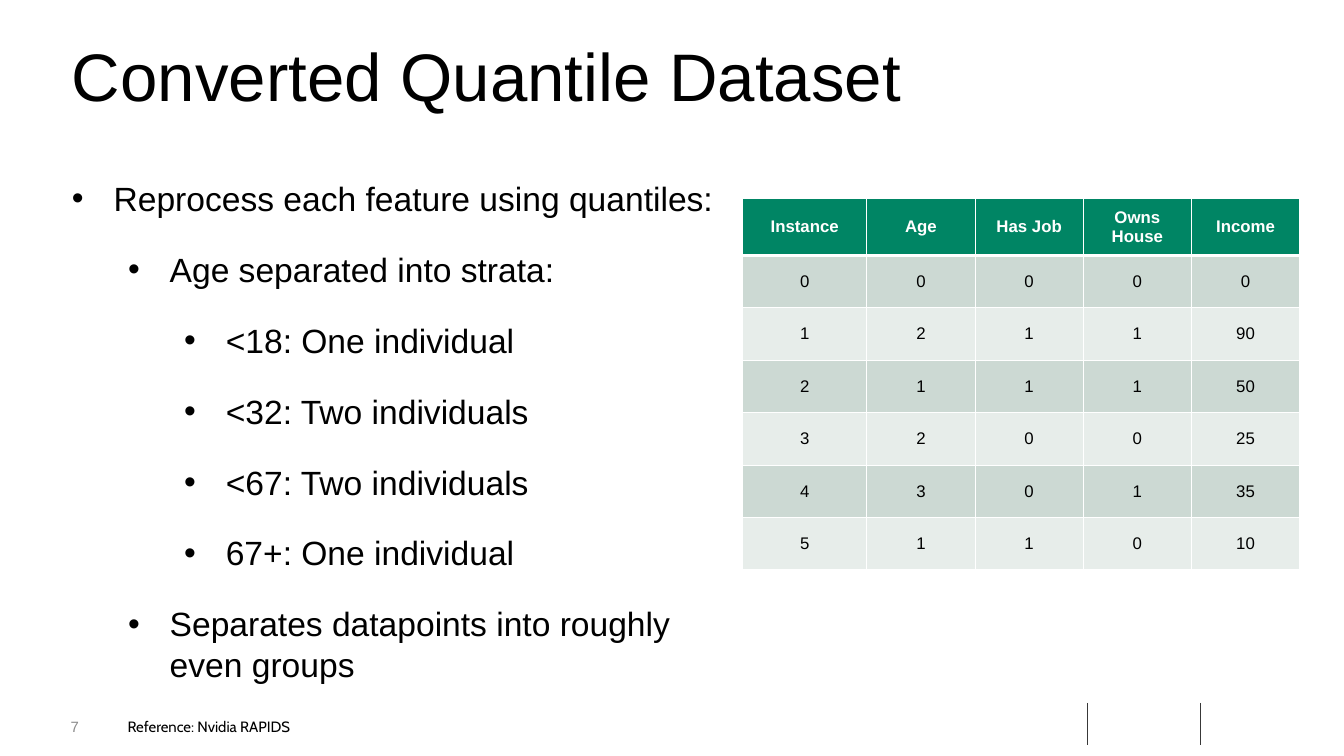
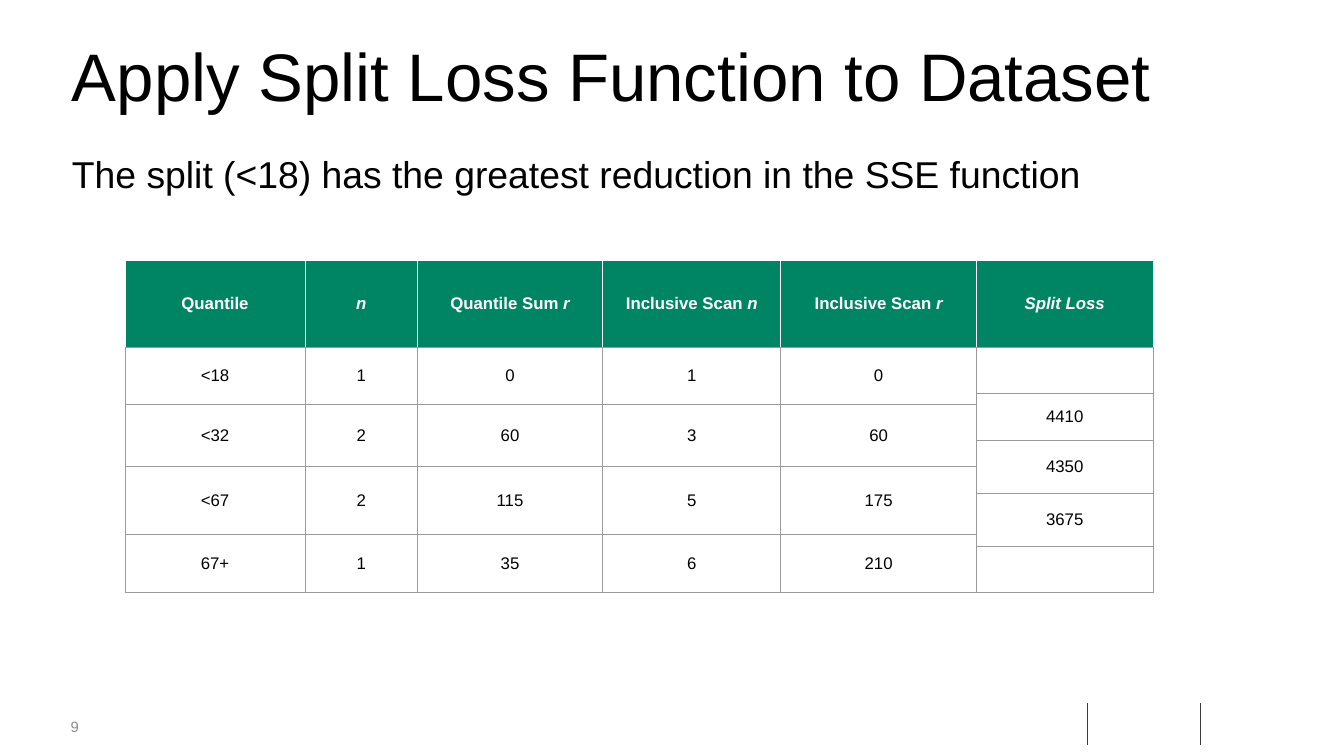
from pptx import Presentation
from pptx.dml.color import RGBColor
from pptx.enum.shapes import MSO_CONNECTOR as Link
from pptx.enum.text import MSO_ANCHOR as Anchor, MSO_AUTO_SIZE as Fit, PP_ALIGN as Align
from pptx.oxml.ns import qn
from pptx.util import Inches, Pt
from lxml.etree import SubElement

BLACK, WHITE, GREEN = "000000", "FFFFFF", "008564"
DARK, GREY, RULE = "383838", "8C8C8C", "9A9A9A"
BANDS = ["CCD9D3", "E7EDEA"]


def put(para, text, size=18, font="Arial", color=BLACK, bold=False,
        align=Align.LEFT, lead=1.0, before=0, level=None):
    props = para._p.get_or_add_pPr()
    if level is None:
        props.set("marL", "0")
        props.set("indent", "0")
        SubElement(props, qn("a:buNone"))
    else:
        para.level = level
        props.set("marL", str(Inches(0.62 + level * 0.835)))
        props.set("indent", str(Inches(-0.62)))
        SubElement(props, qn("a:buChar"), char="•")
    para.alignment, para.line_spacing, para.space_before = align, lead, Pt(before)
    for i, part in enumerate(text.split("*")):
        if part:
            run = para.add_run()
            run.text = part
            run.font.size, run.font.name = Pt(size), font
            run.font.bold, run.font.italic = bold, i % 2 == 1
            run.font.color.rgb = RGBColor.from_string(color)


def style(cell, text, fill, edges, **fmt):
    cell.vertical_anchor = Anchor.MIDDLE
    props = cell._tc.get_or_add_tcPr()
    for side, (color, width) in zip("LRTB", edges):
        line = SubElement(props, qn(f"a:ln{side}"), w=str(Pt(width)))
        paint = SubElement(line, qn("a:solidFill"))
        SubElement(paint, qn("a:srgbClr"), val=color)
    if fill:
        cell.fill.solid()
        cell.fill.fore_color.rgb = RGBColor.from_string(fill)
    else:
        cell.fill.background()
    put(cell.text_frame.paragraphs[0], text, align=Align.CENTER, **fmt)


deck = Presentation()
deck.slide_width, deck.slide_height = Inches(20), Inches(11.25)

pages = [
    ("7", "Converted Quantile Dataset", (0.97, 2.6, 9.91, 7.7),
     (11.05, 2.95, 8.29, 5.76), [1.85] + [1.61] * 4, [0.85] + [0.78] * 6),
    ("9", "Apply Split Loss Function to Dataset", (0.97, 2.2, 18.06, 0.77),
     (1.86, 3.88, 15.29, 4.96), [2.68, 1.67, 2.76, 2.65, 2.91, 2.63],
     [1.29, 0.69, 0.16, 0.53, 0.39, 0.41, 0.6, 0.18, 0.69]),
]
slides, bodies, grids = [], [], []
for num, head, area, spot, cols, rows in pages:
    slide = deck.slides.add_slide(deck.slide_layouts[1])
    for x in (16.18, 17.86):
        rule = slide.shapes.add_connector(
            Link.STRAIGHT, Inches(x), Inches(10.46), Inches(x), Inches(11.09))
        rule.line.color.rgb = RGBColor.from_string(DARK)
        rule.line.width = Pt(1)
        SubElement(rule._element.spPr, qn("a:effectLst"))

    box = slide.shapes.add_textbox(Inches(1.05), Inches(10.68), Inches(0.59), Inches(0.27))
    frame = box.text_frame
    frame.margin_left = frame.margin_right = frame.margin_top = frame.margin_bottom = 0
    frame.vertical_anchor, frame.word_wrap = Anchor.MIDDLE, True
    put(frame.paragraphs[0], num, size=16, color=GREY)

    title, body = slide.shapes.title, slide.placeholders[1]
    for shape, place in ((title, (0.97, 0.6, 17.49, 1.83)), (body, area)):
        shape.left, shape.top, shape.width, shape.height = map(Inches, place)
        shape.text_frame.vertical_anchor = Anchor.TOP
        shape.text_frame.auto_size = Fit.NONE
    put(title.text_frame.paragraphs[0], head, size=72, lead=0.9)

    grid = slide.shapes.add_table(len(rows), len(cols), *map(Inches, spot)).table
    grid.horz_banding = False
    for col, width in zip(grid.columns, cols):
        col.width = Inches(width)
    for row, height in zip(grid.rows, rows):
        row.height = Inches(height)
    slides.append(slide)
    bodies.append(body.text_frame)
    grids.append(grid)

points = [
    (0, "Reprocess each feature using quantiles:"),
    (1, "Age separated into strata:"),
    (2, "<18: One individual"),
    (2, "<32: Two individuals"),
    (2, "<67: Two individuals"),
    (2, "67+: One individual"),
    (1, "Separates datapoints into roughly even groups"),
]
for i, (level, text) in enumerate(points):
    para = bodies[0].add_paragraph() if i else bodies[0].paragraphs[0]
    put(para, text, size=36, level=level, before=32.7 if i else 0)

data = [
    ["Instance", "Age", "Has Job", "Owns House", "Income"],
    [0, 0, 0, 0, 0],
    [1, 2, 1, 1, 90],
    [2, 1, 1, 1, 50],
    [3, 2, 0, 0, 25],
    [4, 3, 0, 1, 35],
    [5, 1, 1, 0, 10],
]
thin, thick = (WHITE, 1), (WHITE, 3)
for r, row in enumerate(data):
    edges = [thin, thin, thick if r == 1 else thin, thick if r == 0 else thin]
    for c, value in enumerate(row):
        style(grids[0].cell(r, c), str(value), BANDS[(r - 1) % 2] if r else GREEN,
              edges, color=BLACK if r else WHITE, bold=r == 0)

note = slides[0].shapes.add_textbox(Inches(1.8), Inches(10.66), Inches(12.16), Inches(0.34))
note.text_frame.word_wrap = True
note.text_frame.vertical_anchor = Anchor.MIDDLE
put(note.text_frame.paragraphs[0], "Reference: Nvidia RAPIDS", size=16, font="Cabin", lead=0.9)

put(bodies[1].paragraphs[0],
    "The split (<18) has the greatest reduction in the SSE function", size=40)

heads = ["Quantile", "*n*", "Quantile Sum *r*", "Inclusive Scan *n*",
         "Inclusive Scan *r*", "*Split Loss*"]
scans = [
    ["<18", 1, 0, 1, 0],
    ["<32", 2, 60, 3, 60],
    ["<67", 2, 115, 5, 175],
    ["67+", 1, 35, 6, 210],
]
losses = [4410, 4350, 3675]
words = {(0, c): text for c, text in enumerate(heads)}
loss = grids[1]
for i, row in enumerate(scans):
    for c, value in enumerate(row):
        words[2 * i + 1, c] = str(value)
        loss.cell(2 * i + 1, c).merge(loss.cell(2 * i + 2, c))
for i, value in enumerate(losses):
    words[2 * i + 2, 5] = str(value)
    loss.cell(2 * i + 2, 5).merge(loss.cell(2 * i + 3, 5))
line = (RULE, 1)
for r in range(len(loss.rows)):
    for c in range(len(heads)):
        edges = [line] * 4 if r else [thin, thin, thin, line]
        style(loss.cell(r, c), words.get((r, c), ""), None if r else GREEN,
              edges, color=BLACK if r else WHITE, bold=r == 0)

deck.save("out.pptx")
